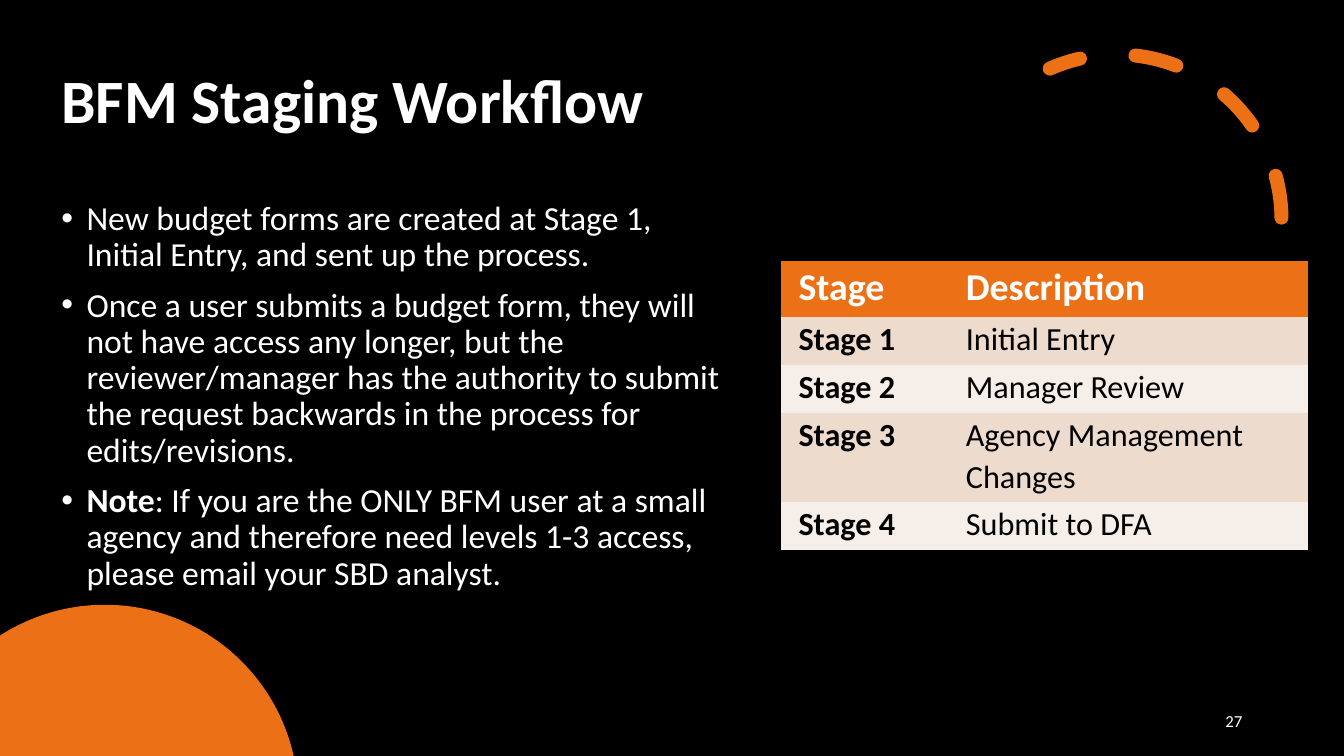
from math import acos, asin, cos, pi, sin

from lxml.etree import SubElement
from pptx import Presentation
from pptx.dml.color import RGBColor
from pptx.enum.dml import MSO_LINE
from pptx.enum.shapes import MSO_SHAPE
from pptx.enum.text import MSO_ANCHOR, PP_ALIGN
from pptx.oxml.ns import qn
from pptx.util import Pt

PX = 9144
SLIDE_WIDTH, SLIDE_HEIGHT = 1333, 750
FONT = "Calibri"
BLACK = RGBColor(0x00, 0x00, 0x00)
WHITE = RGBColor(0xFF, 0xFF, 0xFF)
ORANGE = RGBColor(0xEC, 0x70, 0x16)
BAND_DARK = RGBColor(0xED, 0xDB, 0xCE)
BAND_LIGHT = RGBColor(0xF6, 0xEE, 0xE8)

BULLETS = [
    [("New budget forms are created at Stage 1, Initial Entry, and sent up the process.", False)],
    [("Once a user submits a budget form, they will not have access any longer, but the "
      "reviewer/manager has the authority to submit the request backwards in the process "
      "for edits/revisions.", False)],
    [("Note", True),
     (": If you are the ONLY BFM user at a small agency and therefore need levels 1-3 access, "
      "please email your SBD analyst.", False)],
]
STAGES = [
    ("Stage", "Description"),
    ("Stage 1", "Initial Entry"),
    ("Stage 2", "Manager Review"),
    ("Stage 3", "Agency Management Changes"),
    ("Stage 4", "Submit to DFA"),
]
COLUMN_WIDTHS = [166, 356]
ROW_HEIGHTS = [55, 48, 48, 88, 48]


def to_emu(*lengths):
    """Turn px lengths into EMU."""
    return [round(length * PX) for length in lengths]


def add_run(paragraph, text, size, color, bold=False):
    """Append one formatted run to a paragraph."""
    run = paragraph.add_run()
    run.text = text
    run.font.name = FONT
    run.font.size = Pt(size)
    run.font.bold = bold
    run.font.color.rgb = color


def add_text_frame(slide, box, anchor):
    """Add a wrapping text box and return its frame."""
    frame = slide.shapes.add_textbox(*to_emu(*box)).text_frame
    frame.word_wrap = True
    frame.vertical_anchor = anchor
    return frame


def add_dashed_arc(slide, box):
    """Draw the round-capped dashed arc."""
    arc = slide.shapes.add_shape(MSO_SHAPE.ARC, *to_emu(*box))
    arc.shadow.inherit = False
    arc.adjustments[0] = 144.42 * 0.6
    arc.adjustments[1] = 0
    arc.rotation = 66.1
    arc.element.spPr.find(qn("a:xfrm")).set("flipH", "1")
    arc.fill.background()
    arc.line.color.rgb = ORANGE
    arc.line.width = Pt(10)
    arc.line.dash_style = MSO_LINE.DASH
    arc.element.spPr.find(qn("a:ln")).set("cap", "rnd")


def add_corner_disc(slide, center_x, center_y, radius, steps=60):
    """Draw the part of a disc that lies inside the bottom left corner."""
    start = -acos(-center_x / radius)
    end = asin((SLIDE_HEIGHT - center_y) / radius)
    angles = [start + (end - start) * step / steps for step in range(steps + 1)]
    rim = [to_emu(center_x + radius * cos(angle), center_y + radius * sin(angle))
           for angle in angles]
    builder = slide.shapes.build_freeform(*to_emu(0, SLIDE_HEIGHT))
    builder.add_line_segments(rim, close=True)
    disc = builder.convert_to_shape()
    disc.shadow.inherit = False
    disc.fill.solid()
    disc.fill.fore_color.rgb = ORANGE
    disc.line.fill.background()


def add_title(slide, box):
    """Write the slide title."""
    paragraph = add_text_frame(slide, box, MSO_ANCHOR.MIDDLE).paragraphs[0]
    paragraph.line_spacing = 0.9
    add_run(paragraph, "BFM Staging Workflow", 44, WHITE, True)


def add_bullets(slide, box):
    """Write the bulleted body text."""
    frame = add_text_frame(slide, box, MSO_ANCHOR.TOP)
    for index, runs in enumerate(BULLETS):
        paragraph = frame.add_paragraph() if index else frame.paragraphs[0]
        paragraph.line_spacing = 0.9
        paragraph.space_before = Pt(10)
        properties = paragraph._p.get_or_add_pPr()
        properties.set("marL", str(25 * PX))
        properties.set("indent", str(-25 * PX))
        SubElement(properties, qn("a:buFont")).set("typeface", "Arial")
        SubElement(properties, qn("a:buChar")).set("char", "•")
        for text, bold in runs:
            add_run(paragraph, text, 24, WHITE, bold)


def add_stage_table(slide, left, top):
    """Build the table of stages with a header and banded rows."""
    box = to_emu(left, top, sum(COLUMN_WIDTHS), sum(ROW_HEIGHTS))
    table = slide.shapes.add_table(len(STAGES), len(COLUMN_WIDTHS), *box).table
    for column, width in zip(table.columns, to_emu(*COLUMN_WIDTHS)):
        column.width = width
    for row, height in zip(table.rows, to_emu(*ROW_HEIGHTS)):
        row.height = height
    for row_index, texts in enumerate(STAGES):
        header = row_index == 0
        band = BAND_DARK if row_index % 2 else BAND_LIGHT
        for column_index, text in enumerate(texts):
            cell = table.cell(row_index, column_index)
            cell.fill.solid()
            cell.fill.fore_color.rgb = ORANGE if header else band
            cell.margin_left = cell.margin_right = 17 * PX
            cell.margin_top = cell.margin_bottom = 0
            paragraph = cell.text_frame.paragraphs[0]
            paragraph.line_spacing = 1.07
            add_run(paragraph, text, 27 if header else 23,
                    WHITE if header else BLACK, header or column_index == 0)
    properties = table._tbl.tblPr
    properties.find(qn("a:tableStyleId")).text = "{2D5ABB26-0587-4C30-8999-92F81FD0307C}"


def add_slide_number(slide, box):
    """Write the slide number."""
    paragraph = add_text_frame(slide, box, MSO_ANCHOR.MIDDLE).paragraphs[0]
    paragraph.alignment = PP_ALIGN.RIGHT
    add_run(paragraph, "27", 12, WHITE)


def main():
    """Build the slide and save it."""
    presentation = Presentation()
    presentation.slide_width, presentation.slide_height = to_emu(SLIDE_WIDTH, SLIDE_HEIGHT)
    slide = presentation.slides.add_slide(presentation.slide_layouts[6])
    slide.background.fill.solid()
    slide.background.fill.fore_color.rgb = BLACK
    add_dashed_arc(slide, (944, 54, 327, 327))
    add_title(slide, (51, 30, 688, 145))
    add_corner_disc(slide, 104, 792, 192)
    add_bullets(slide, (51, 195, 688, 458))
    add_stage_table(slide, 775, 259)
    add_slide_number(slide, (942, 695, 300, 40))
    presentation.save("out.pptx")


if __name__ == "__main__":
    main()
